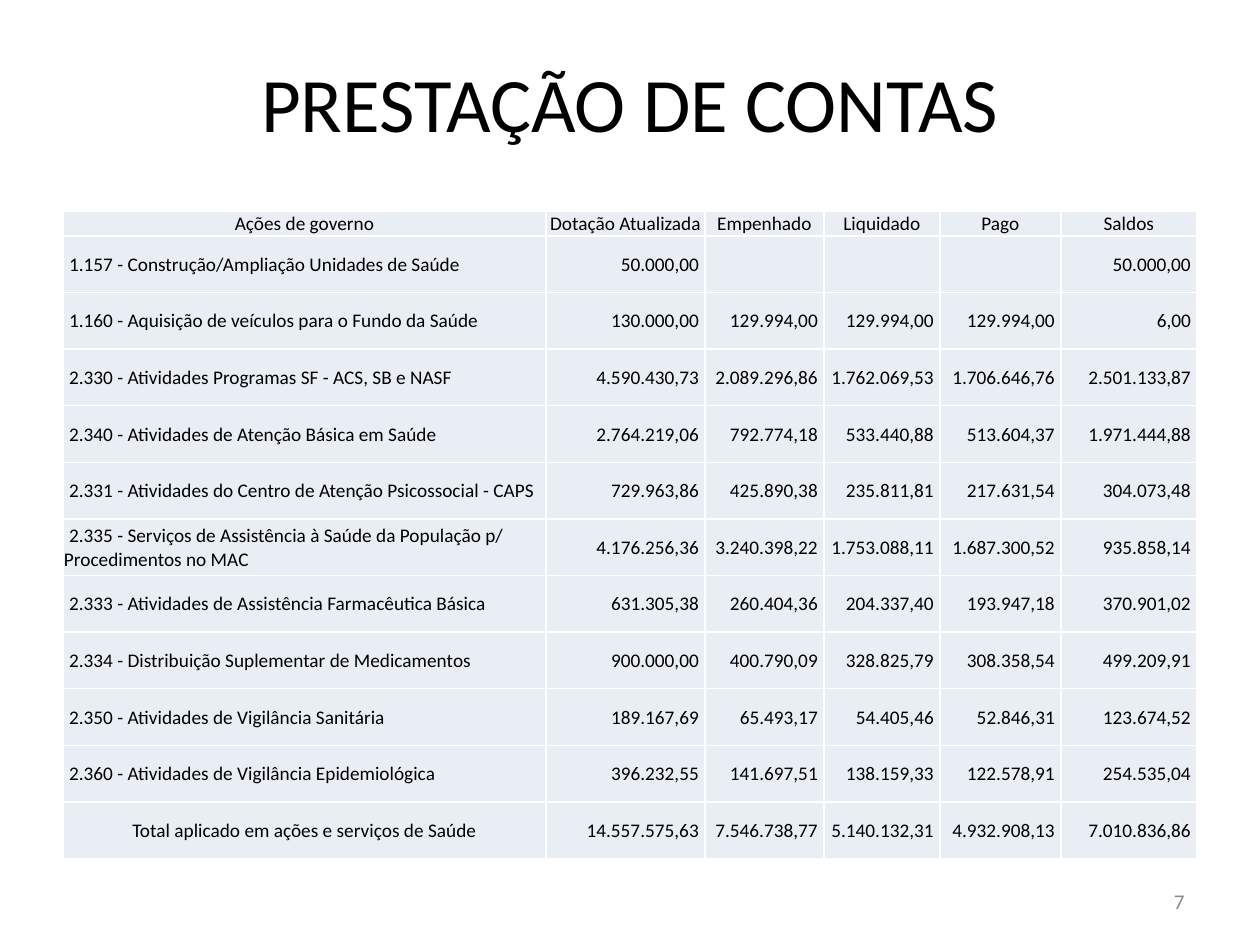
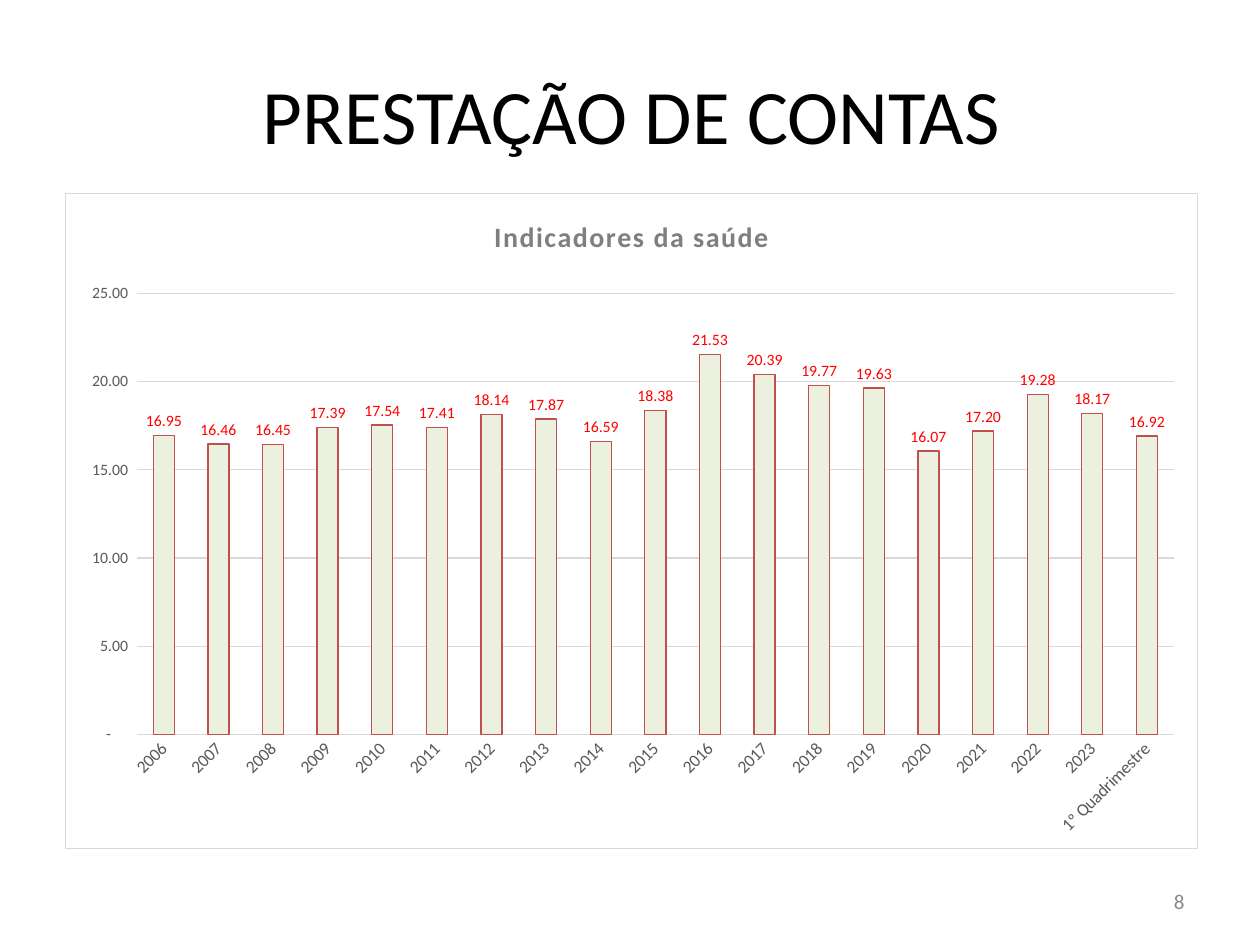
from lxml.etree import SubElement, fromstring
from pptx import Presentation
from pptx.chart.data import CategoryChartData
from pptx.dml.color import RGBColor
from pptx.enum.chart import XL_CHART_TYPE as ChartType, XL_LABEL_POSITION as LabelPosition
from pptx.enum.chart import XL_TICK_MARK as TickMark
from pptx.enum.text import MSO_ANCHOR as Anchor, PP_ALIGN as Align
from pptx.oxml.ns import nsdecls, qn
from pptx.util import Emu, Pt

TITLE = "PRESTAÇÃO DE CONTAS"
HEADINGS = ["Ações de governo", "Dotação Atualizada", "Empenhado", "Liquidado", "Pago", "Saldos"]
ACTIONS = [
    ("1.157 - Construção/Ampliação Unidades de Saúde",
     "50.000,00", "", "", "", "50.000,00"),
    ("1.160 - Aquisição de veículos para o Fundo da Saúde",
     "130.000,00", "129.994,00", "129.994,00", "129.994,00", "6,00"),
    ("2.330 - Atividades Programas SF - ACS, SB e NASF",
     "4.590.430,73", "2.089.296,86", "1.762.069,53", "1.706.646,76", "2.501.133,87"),
    ("2.340 - Atividades de Atenção Básica em Saúde",
     "2.764.219,06", "792.774,18", "533.440,88", "513.604,37", "1.971.444,88"),
    ("2.331 - Atividades do Centro de Atenção Psicossocial - CAPS",
     "729.963,86", "425.890,38", "235.811,81", "217.631,54", "304.073,48"),
    ("2.335 - Serviços de Assistência à Saúde da População p/ Procedimentos no MAC",
     "4.176.256,36", "3.240.398,22", "1.753.088,11", "1.687.300,52", "935.858,14"),
    ("2.333 - Atividades de Assistência Farmacêutica Básica",
     "631.305,38", "260.404,36", "204.337,40", "193.947,18", "370.901,02"),
    ("2.334 - Distribuição Suplementar de Medicamentos",
     "900.000,00", "400.790,09", "328.825,79", "308.358,54", "499.209,91"),
    ("2.350 - Atividades de Vigilância Sanitária",
     "189.167,69", "65.493,17", "54.405,46", "52.846,31", "123.674,52"),
    ("2.360 - Atividades de Vigilância Epidemiológica",
     "396.232,55", "141.697,51", "138.159,33", "122.578,91", "254.535,04"),
]
TOTAL = ("Total aplicado em ações e serviços de Saúde",
         "14.557.575,63", "7.546.738,77", "5.140.132,31", "4.932.908,13", "7.010.836,86")

INDICATOR_TITLE = "Indicadores da saúde"
PERIODS = [str(year) for year in range(2006, 2024)] + ["1º Quadrimestre"]
INDICATORS = [16.95, 16.46, 16.45, 17.39, 17.54, 17.41, 18.14, 17.87, 16.59, 18.38,
              21.53, 20.39, 19.77, 19.63, 16.07, 17.20, 19.28, 18.17, 16.92]
NUMBER_FORMAT = r'_(* #,##0.00_);_(* \(#,##0.00\);_(* "-"??_);_(@_)'

COLORS = {"paper": "FFFFFF", "ink": "000000", "page": "898989", "cell": "E9EDF4",
          "heading": "7F7F7F", "axis": "595959", "grid": "D9D9D9",
          "bar": "EBF1DE", "bar_edge": "C0504D", "value": "FF0000"}
FONT = "Calibri"

PX = 914400 // 126
SLIDE_SIZE = (1260, 945)
PAGE_BOX = (903, 876, 294, 50)
TABLE_LEFT, TABLE_TOP = 63, 211
COLUMN_WIDTHS = [483, 159, 119, 116, 121, 136]
HEADING_HEIGHT, ACTIONS_HEIGHT = 25, 623
CELL_INSET, TEXT_GAP = 1, 5
CHART_BOX = (65, 193, 1133, 656)
PLOT_BOX = (136, 293, 1039, 442)


def px(*lengths):
    return [Emu(length * PX) for length in lengths]


def color(key):
    return RGBColor.from_string(COLORS[key])


def style_font(font, size, key, bold=False):
    font.name, font.size, font.bold = FONT, Pt(size), bold
    font.color.rgb = color(key)


def write(frame, text, size=11, key="ink", align=Align.LEFT, bold=False, indent=0, spacing=0):
    paragraph = frame.paragraphs[0]
    paragraph.alignment = align
    if indent:
        paragraph._p.get_or_add_pPr().set("indent", str(indent * PX))
    run = paragraph.add_run()
    run.text = text
    style_font(run.font, size, key, bold)
    if spacing:
        run._r.get_or_add_rPr().set("spc", str(spacing * 100))


def add_text(slide, box, text, **style):
    shape = slide.shapes.add_textbox(*px(*box))
    shape.text_frame.word_wrap = True
    shape.text_frame.vertical_anchor = Anchor.MIDDLE
    write(shape.text_frame, text, **style)
    return shape


def add_page(deck, number, title_box):
    slide = deck.slides.add_slide(deck.slide_layouts[6])
    add_text(slide, PAGE_BOX, str(number), size=12, key="page", align=Align.RIGHT)
    title = add_text(slide, title_box, TITLE, size=44, align=Align.CENTER)
    title.fill.solid()
    title.fill.fore_color.rgb = color("paper")
    return slide


def add_borders(cell):
    for position, side in enumerate(("lnL", "lnR", "lnT", "lnB")):
        cell._tc.get_or_add_tcPr().insert(position, fromstring(
            f'<a:{side} {nsdecls("a")} w="12700"><a:solidFill>'
            f'<a:srgbClr val="{COLORS["paper"]}"/></a:solidFill></a:{side}>'))


def fill_cell(cell, text, align):
    cell.fill.solid()
    cell.fill.fore_color.rgb = color("cell")
    add_borders(cell)
    cell.vertical_anchor = Anchor.MIDDLE
    right = TEXT_GAP if align == Align.RIGHT else 0
    cell.margin_left, cell.margin_top, cell.margin_right, cell.margin_bottom = px(
        CELL_INSET, CELL_INSET, CELL_INSET + right, 0)
    if text:
        write(cell.text_frame, text, align=align, indent=TEXT_GAP if align == Align.LEFT else 0)


def add_accounts(slide):
    rows = [HEADINGS, *ACTIONS, TOTAL]
    box = (TABLE_LEFT, TABLE_TOP, sum(COLUMN_WIDTHS), HEADING_HEIGHT + ACTIONS_HEIGHT)
    accounts = slide.shapes.add_table(len(rows), len(HEADINGS), *px(*box)).table
    for column, width in zip(accounts.columns, px(*COLUMN_WIDTHS)):
        column.width = width
    for r, values in enumerate(rows):
        heading = values is HEADINGS
        accounts.rows[r].height = Emu(
            HEADING_HEIGHT * PX if heading else ACTIONS_HEIGHT * PX // (len(rows) - 1))
        for c, value in enumerate(values):
            if heading or (values is TOTAL and c == 0):
                align = Align.CENTER
            else:
                align = Align.RIGHT if c else Align.LEFT
            fill_cell(accounts.cell(r, c), value, align)


def frame_chart(chart):
    """Give the chart area its fill and border."""
    chart._chartSpace.find(qn("c:chart")).addnext(fromstring(
        f'<c:spPr {nsdecls("c", "a")}>'
        f'<a:solidFill><a:srgbClr val="{COLORS["paper"]}"/></a:solidFill>'
        f'<a:ln w="9525"><a:solidFill><a:srgbClr val="{COLORS["grid"]}"/></a:solidFill></a:ln>'
        '</c:spPr>'))


def place_plot(chart):
    plot_area = chart._chartSpace.find(qn("c:chart")).find(qn("c:plotArea"))
    for automatic in plot_area.findall(qn("c:layout")):
        plot_area.remove(automatic)
    layout = fromstring(f'<c:layout {nsdecls("c")}/>')
    manual = SubElement(layout, qn("c:manualLayout"))
    left, top, width, height = CHART_BOX
    x, y, w, h = PLOT_BOX
    settings = {"layoutTarget": "inner", "xMode": "edge", "yMode": "edge",
                "x": (x - left) / width, "y": (y - top) / height,
                "w": w / width, "h": h / height}
    for tag, value in settings.items():
        SubElement(manual, qn(f"c:{tag}")).set("val", str(value))
    plot_area.insert(0, layout)


def style_axis(axis, size):
    axis.major_tick_mark = axis.minor_tick_mark = TickMark.NONE
    axis.format.line.fill.background()
    style_font(axis.tick_labels.font, size, "axis")


def add_indicators(slide):
    data = CategoryChartData(number_format=NUMBER_FORMAT)
    data.categories = PERIODS
    data.add_series("Series 1", INDICATORS)
    chart = slide.shapes.add_chart(ChartType.COLUMN_CLUSTERED, *px(*CHART_BOX), data).chart
    style_font(chart.font, 10, "ink")
    chart.has_legend = False
    chart.has_title = True
    chart.chart_title.include_in_layout = False
    write(chart.chart_title.text_frame, INDICATOR_TITLE, size=16, key="heading",
          align=Align.CENTER, bold=True, spacing=1)
    frame_chart(chart)
    place_plot(chart)

    periods, scale = chart.category_axis, chart.value_axis
    style_axis(periods, 10)
    periods._element.find(qn("c:txPr")).find(qn("a:bodyPr")).set("rot", "-2700000")
    style_axis(scale, 9)
    scale.minimum_scale, scale.maximum_scale, scale.major_unit = 0, 25, 5
    scale.tick_labels.number_format = NUMBER_FORMAT
    scale.tick_labels.number_format_is_linked = False
    scale.major_gridlines.format.line.color.rgb = color("grid")
    scale.major_gridlines.format.line.width = Pt(0.75)

    plot = chart.plots[0]
    plot.gap_width, plot.vary_by_categories = 160, False
    bars = plot.series[0]
    bars.format.fill.solid()
    bars.format.fill.fore_color.rgb = color("bar")
    bars.format.line.color.rgb = color("bar_edge")
    bars.format.line.width = Pt(0.75)
    labels = bars.data_labels
    labels.show_value = True
    labels.position = LabelPosition.OUTSIDE_END
    labels.number_format, labels.number_format_is_linked = NUMBER_FORMAT, False
    style_font(labels.font, 9, "value")


def main():
    deck = Presentation()
    deck.slide_width, deck.slide_height = px(*SLIDE_SIZE)
    add_accounts(add_page(deck, 7, (63, 38, 1134, 127)))
    add_indicators(add_page(deck, 8, (65, 35, 1133, 158)))
    deck.save("out.pptx")


if __name__ == "__main__":
    main()
